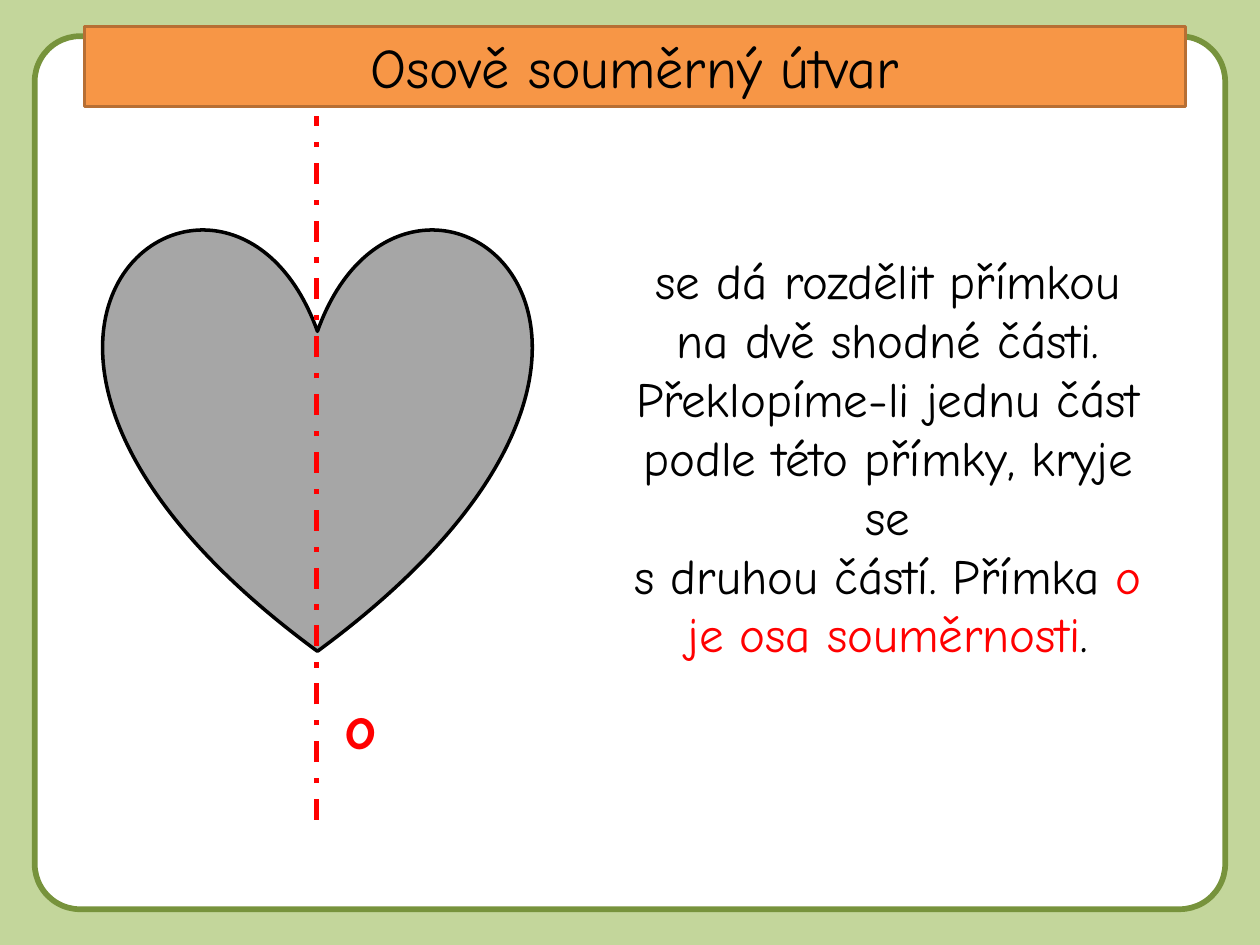
from dataclasses import dataclass

from lxml.etree import SubElement
from pptx import Presentation
from pptx.dml.color import RGBColor
from pptx.enum.dml import MSO_LINE
from pptx.enum.shapes import MSO_CONNECTOR, MSO_SHAPE
from pptx.enum.text import MSO_ANCHOR, MSO_AUTO_SIZE, PP_ALIGN
from pptx.oxml.ns import qn
from pptx.util import Cm, Pt

FONT = "Comic Neue"
BLACK, WHITE, RED = "000000", "FFFFFF", "FF0000"


@dataclass
class Box:
    left: float
    top: float
    width: float
    height: float


@dataclass
class Figure:
    kind: MSO_SHAPE
    box: Box
    fill: str
    outline: str
    weight: float


@dataclass
class Words:
    text: str
    color: str = BLACK
    bold: bool = False


def paint(target, color: str) -> None:
    if hasattr(target, "solid"):
        target.solid()
        target.fore_color.rgb = RGBColor.from_string(color)
    else:
        target.color.rgb = RGBColor.from_string(color)


def place(shape, box: Box) -> None:
    shape.left, shape.top = Cm(box.left), Cm(box.top)
    shape.width, shape.height = Cm(box.width), Cm(box.height)


def outline(shape, color: str, weight: float) -> None:
    paint(shape.line, color)
    shape.line.width = Pt(weight)


def draw_figure(slide, figure: Figure):
    shape = slide.shapes.add_shape(figure.kind, 0, 0, 0, 0)
    place(shape, figure.box)
    shape.shadow.inherit = False
    paint(shape.fill, figure.fill)
    outline(shape, figure.outline, figure.weight)
    return shape


def write(shape, paragraphs: list[list[Words]], size: float,
          align: PP_ALIGN = PP_ALIGN.CENTER) -> None:
    frame = shape.text_frame
    frame.word_wrap = True
    frame.auto_size = MSO_AUTO_SIZE.NONE
    frame.vertical_anchor = MSO_ANCHOR.TOP
    for index, pieces in enumerate(paragraphs):
        paragraph = frame.add_paragraph() if index else frame.paragraphs[0]
        paragraph.alignment = align
        paragraph.space_before = Pt(0)
        properties = paragraph._p.get_or_add_pPr()
        properties.set("marL", "0")
        properties.set("indent", "0")
        SubElement(properties, qn("a:buNone"))
        for piece in pieces:
            run = paragraph.add_run()
            run.text = piece.text
            run.font.name = FONT
            run.font.size = Pt(size)
            run.font.bold = piece.bold
            paint(run.font, piece.color)


def draw_axis(slide, x: float, top: float, bottom: float) -> None:
    axis = slide.shapes.add_connector(
        MSO_CONNECTOR.STRAIGHT, Cm(x), Cm(bottom), Cm(x), Cm(top))
    outline(axis, RED, 3)
    axis.line.dash_style = MSO_LINE.DASH_DOT
    SubElement(axis._element.spPr, qn("a:effectLst"))


def main() -> None:
    deck = Presentation()
    deck.slide_width, deck.slide_height = Cm(25.4), Cm(19.05)
    slide = deck.slides.add_slide(deck.slide_layouts[1])
    paint(slide.background.fill, "C3D69B")

    card = draw_figure(slide, Figure(
        MSO_SHAPE.ROUNDED_RECTANGLE, Box(0.7, 0.73, 24, 17.6), WHITE, "77933C", 3.25))
    card.adjustments[0] = 0.052
    slide.shapes._spTree.insert(2, card._element)

    title = slide.shapes.title
    place(title, Box(1.7, 0.53, 22.2, 1.62))
    paint(title.fill, "F79646")
    outline(title, "B76F34", 2)
    write(title, [[Words("Osově souměrný útvar")]], 32)

    definition = slide.placeholders[1]
    place(definition, Box(12.3, 4.93, 11.2, 8.63))
    paint(definition.fill, WHITE)
    write(definition, [
        [Words("se dá rozdělit přímkou na dvě shodné části. "
               "Překlopíme-li jednu část podle této přímky, kryje se")],
        [Words("s druhou částí. Přímka "), Words("o je osa souměrnosti", RED), Words(".")],
    ], 28)

    draw_figure(slide, Figure(
        MSO_SHAPE.HEART, Box(2.1, 4.53, 8.6, 8.6), "A6A6A6", BLACK, 2))
    draw_axis(slide, 6.38, 2.33, 16.53)

    axis_label = slide.shapes.add_textbox(0, 0, 0, 0)
    place(axis_label, Box(6.7, 13.72, 1.8, 1.8))
    write(axis_label, [[Words("o", RED, True)]], 36, PP_ALIGN.LEFT)

    deck.save("out.pptx")


if __name__ == "__main__":
    main()
